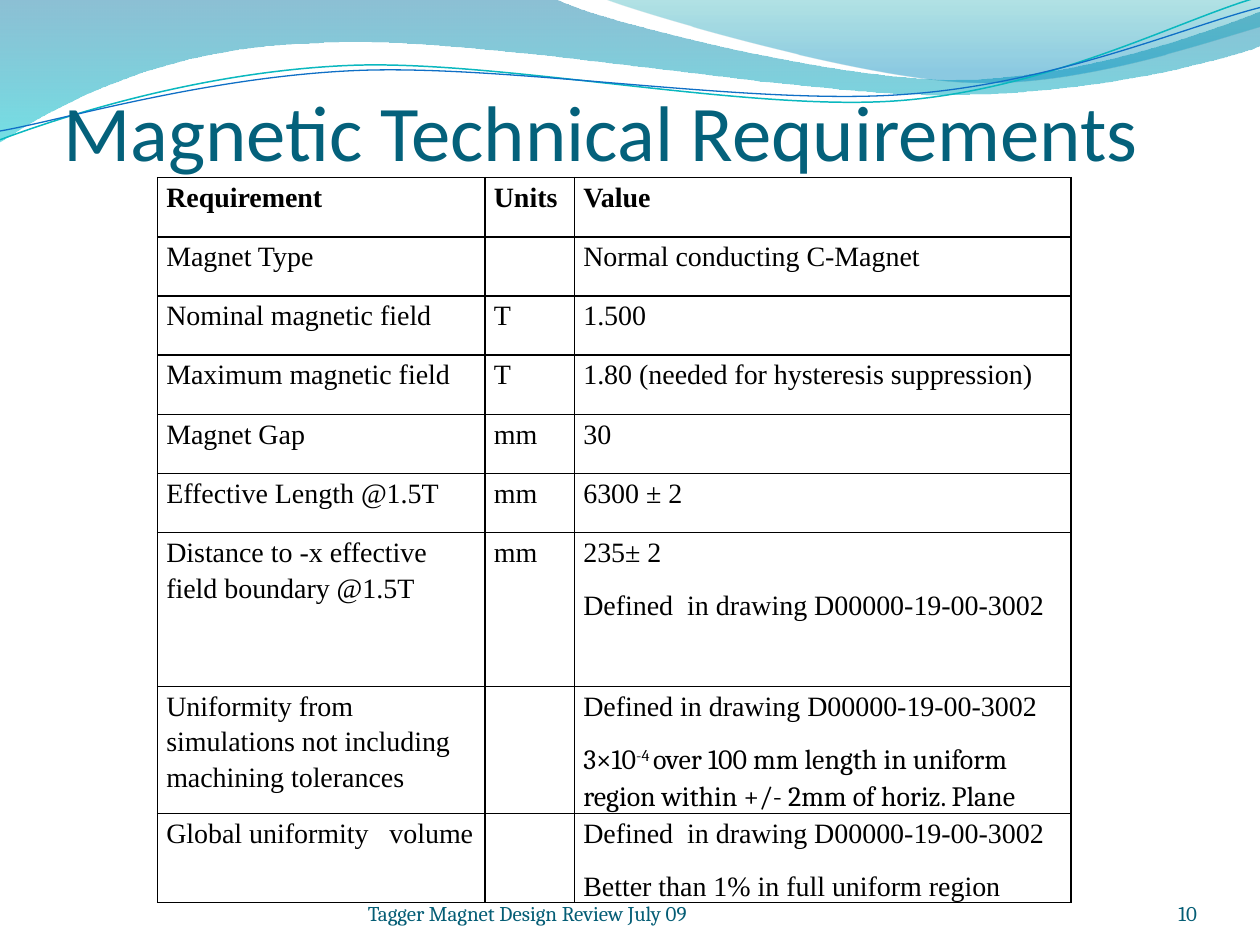
from lxml.etree import SubElement
from pptx import Presentation
from pptx.dml.color import RGBColor
from pptx.enum.text import MSO_ANCHOR, MSO_AUTO_SIZE, PP_ALIGN
from pptx.oxml.ns import qn
from pptx.util import Inches, Pt

COLORS = {
    "title": "04617B", "footer": "045D75", "text": "000000", "border": "000000",
    "teal line": "0AB8BF", "blue line": "0F6FC6",
    "deep blue": "0074A1", "cyan": "00C6CF", "teal": "00A1A9", "sky": "008BBF",
}

# Each outline is a start point followed by line ends (2 numbers) or Bezier curves (6 numbers).
LEFT_WAVE = [
    (0, 0), (4.4, -0.01), (4.76, 0.17, 6.64, 0.63, 7.58, 0.63),
    (8.53, 0.63, 9.58, 0.26, 10, 0.09), (10.01, 0.36),
    (9.83, 0.44, 8.7, 0.76, 7.46, 0.75), (6.22, 0.75, 3.82, 0.28, 2.57, 0.34),
    (1.29, 0.36, 0.46, 0.83, -0.01, 1.13), (0, 0),
]
RIGHT_WAVE = [
    (4.79, -0.01), (5.09, 0.11, 6.82, 0.62, 7.69, 0.65),
    (8.56, 0.69, 9.61, 0.32, 10, 0.21), (10, 0), (4.79, -0.01),
]
TEAL_CURVE = [
    (0, 1.11), (0.48, 0.93, 1.58, 0.57, 2.77, 0.52),
    (3.95, 0.47, 5.93, 0.89, 7.13, 0.8), (8.33, 0.71, 9.38, 0.15, 9.98, -0.02),
]
BLUE_CURVE = [
    (0, 1.04), (0.47, 0.96, 1.64, 0.61, 2.83, 0.56),
    (4.03, 0.51, 5.97, 0.84, 7.17, 0.75), (8.36, 0.67, 9.41, 0.21, 10, 0.06),
]

COLUMN_WIDTHS = [2.6, 0.71, 3.94]
ROW_HEIGHTS = [0.47] * 6 + [1.22] + [0.47] * 2
# A cell's paragraphs are separated by a line break.
REQUIREMENTS = [
    ("Requirement", "Units", "Value"),
    ("Magnet Type", "", "Normal conducting C-Magnet"),
    ("Nominal magnetic field", "T", "1.500"),
    ("Maximum magnetic field", "T", "1.80 (needed for hysteresis suppression)"),
    ("Magnet Gap", "mm", "30"),
    ("Effective Length @1.5T", "mm", "6300 ± 2"),
    ("Distance to -x effective field boundary @1.5T", "mm",
     "235± 2\nDefined  in drawing D00000-19-00-3002"),
    ("Uniformity from simulations not including machining tolerances", "",
     "Defined in drawing D00000-19-00-3002\n"
     "3×10^-4 ^over 100 mm length in uniform region within +/- 2mm of horiz. Plane"),
    ("Global uniformity   volume", "",
     "Defined  in drawing D00000-19-00-3002\nBetter than 1% in full uniform region"),
]


def color(name):
    return RGBColor.from_string(COLORS[name])


def set_font(font, name, size, color_name, bold=False):
    font.name, font.size, font.bold = name, Pt(size), bold
    font.color.rgb = color(color_name)


def add_outline(page, outline, close):
    """Draw straight lines through all points, then merge each curve's three into a Bezier."""
    start, *segments = outline
    builder = page.shapes.build_freeform(Inches(start[0]), Inches(start[1]))
    points = [(Inches(x), Inches(y)) for segment in segments
              for x, y in zip(segment[::2], segment[1::2])]
    builder.add_line_segments(points, close=close)
    shape = builder.convert_to_shape()
    shape.shadow.inherit = False
    lines = iter(list(shape.element.iter(qn("a:lnTo"))))
    for segment in segments:
        line = next(lines)
        if len(segment) == 6:
            curve = line.makeelement(qn("a:cubicBezTo"), {})
            line.addprevious(curve)
            for part in (line, next(lines), next(lines)):
                curve.append(part[0])
                part.getparent().remove(part)
    return shape


def add_wave(page, outline, stops):
    """Add a filled wave; stops are (position, color name, opacity percent)."""
    wave = add_outline(page, outline, close=True)
    wave.line.fill.background()
    wave.fill.gradient()
    wave.fill.gradient_angle = 270
    for stop, (position, name, opacity) in zip(wave.fill.gradient_stops, stops):
        stop.position = position
        stop.color.rgb = color(name)
    color_elements = wave.element.spPr.iterfind(".//" + qn("a:srgbClr"))
    for element, (_, _, opacity) in zip(color_elements, stops):
        SubElement(element, qn("a:alpha"), val=str(opacity * 1000))


def add_curve(page, outline, color_name, width):
    curve = add_outline(page, outline, close=False)
    curve.fill.background()
    curve.line.color.rgb = color(color_name)
    curve.line.width = Pt(width)


def add_header_waves(page):
    add_wave(page, LEFT_WAVE, [(0, "deep blue", 45), (1, "cyan", 55)])
    add_wave(page, RIGHT_WAVE, [(0, "teal", 30), (0.8, "sky", 45)])
    add_curve(page, TEAL_CURVE, "teal line", 0.85)
    add_curve(page, BLUE_CURVE, "blue line", 0.75)


def set_text(shape, text, font_name, size, color_name, align, top_margin=0):
    frame = shape.text_frame
    frame.word_wrap = True
    frame.auto_size = MSO_AUTO_SIZE.NONE
    frame.vertical_anchor = MSO_ANCHOR.BOTTOM
    frame.margin_left = frame.margin_right = frame.margin_bottom = 0
    frame.margin_top = Inches(top_margin)
    para = frame.paragraphs[0]
    para.text, para.alignment = text, align
    set_font(para.font, font_name, size, color_name)


def place_title(page, left, top, width, height):
    title = page.shapes.title
    title.left, title.top, title.width, title.height = left, top, width, height
    set_text(title, "Magnetic Technical Requirements", "Calibri", 45, "title",
             PP_ALIGN.LEFT, top_margin=0.05)
    title.element.getparent().append(title.element)  # in front of the waves


def add_borders(cell):
    properties = cell._tc.get_or_add_tcPr()
    for index, side in enumerate(("a:lnL", "a:lnR", "a:lnT", "a:lnB")):
        line = properties.makeelement(qn(side), {"w": str(Pt(1))})
        fill = SubElement(line, qn("a:solidFill"))
        SubElement(fill, qn("a:srgbClr"), val=COLORS["border"])
        properties.insert(index, line)


def fill_cell(cell, text, bold, space_before):
    """Fill a cell; text between carets is superscript and sets its paragraph in Cambria."""
    cell.margin_left = cell.margin_right = Inches(0.07)
    cell.margin_top = cell.margin_bottom = 0
    cell.fill.background()
    add_borders(cell)
    frame = cell.text_frame
    for index, line in enumerate(text.split("\n")):
        para = frame.add_paragraph() if index else frame.paragraphs[0]
        para.line_spacing = 1.15
        para.space_before, para.space_after = Pt(space_before), Pt(10)
        set_font(para.font, "Cambria" if "^" in line else "Times New Roman", 16, "text", bold)
        for part, words in enumerate(line.split("^") if line else []):
            span = para.add_run()
            span.text = words
            if part % 2:
                span.font._element.set("baseline", "30000")


def add_requirements_table(page, left, top, width, height):
    table = page.shapes.add_table(len(REQUIREMENTS), len(COLUMN_WIDTHS),
                                  left, top, width, height).table
    table.first_row = table.horz_banding = False
    for column, column_width in zip(table.columns, COLUMN_WIDTHS):
        column.width = Inches(column_width)
    for r, (row, row_height) in enumerate(zip(table.rows, ROW_HEIGHTS)):
        row.height = Inches(row_height)
        for c, text in enumerate(REQUIREMENTS[r]):
            spaced = r == 0 or (c == 0 and r < 3)
            fill_cell(table.cell(r, c), text, bold=r == 0, space_before=12 if spaced else 0)


def add_footer(page, top, height):
    for text, left, width, align in (
        ("10", 8.67, 0.83, PP_ALIGN.RIGHT),
        ("Tagger Magnet Design Review July 09", 2.92, 3.67, PP_ALIGN.LEFT),
    ):
        box = page.shapes.add_textbox(Inches(left), top, Inches(width), height)
        set_text(box, text, "Cambria", 12, "footer", align)


def main():
    deck = Presentation()
    deck.slide_width, deck.slide_height = Inches(10), Inches(7.5)
    page = deck.slides.add_slide(deck.slide_layouts[5])
    add_header_waves(page)
    place_title(page, Inches(0.5), Inches(0.33), Inches(9), Inches(1.08))
    add_requirements_table(page, Inches(1.25), Inches(1.41), Inches(7.25), Inches(5.84))
    add_footer(page, Inches(6.95), Inches(0.4))
    deck.save("out.pptx")


if __name__ == "__main__":
    main()
